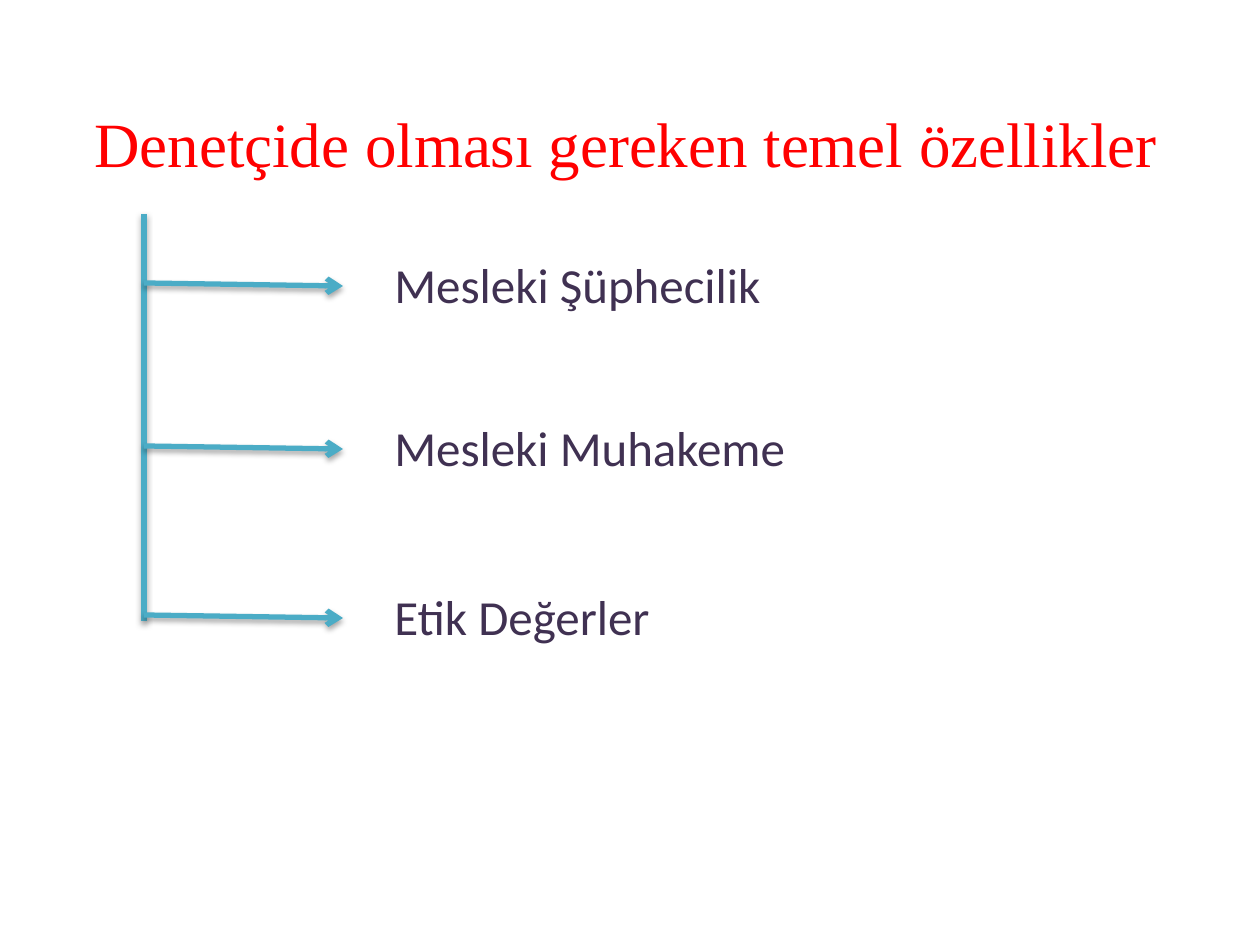
from lxml.etree import SubElement
from pptx import Presentation
from pptx.dml.color import RGBColor as RGB
from pptx.enum.shapes import MSO_CONNECTOR as Connector
from pptx.enum.text import MSO_AUTO_SIZE as AutoSize, PP_ALIGN as Align
from pptx.oxml.ns import qn
from pptx.util import Pt

EMU_PER_PX = 914400 / 126

THEME = {
    "title": {"name": "Times New Roman", "size": Pt(36), "color": RGB(0xFF, 0x00, 0x00)},
    "trait": {"name": "Calibri", "size": Pt(28), "color": RGB(0x40, 0x31, 0x52)},
    "line": {"color": RGB(0x4B, 0xAC, 0xC6), "width": Pt(3)},
    "shadow": {"blurRad": 40000, "dist": 23000, "dir": 5400000, "rotWithShape": 0},
    "shadow_alpha": 35000,
}

TITLE = "Denetçide olması gereken temel özellikler"
# Trait, top of its label, width of its label
TRAITS = [
    ("Mesleki Şüphecilik", 248, 433),
    ("Mesleki Muhakeme", 411, 452),
    ("Etik Değerler", 580, 312),
]
TRUNK_X, TRUNK_TOP, TRUNK_BOTTOM = 144, 214, 621
ARROW_END_X = 343
LABEL_X, LABEL_HEIGHT = 382, 72
ARROW_DROP, ARROW_SLOPE = 35, 3


def px(length):
    return round(length * EMU_PER_PX)


def add_text(slide, text, box, style, wrap):
    label = slide.shapes.add_textbox(*map(px, box))
    frame = label.text_frame
    for name, value in {"word_wrap": wrap, "auto_size": AutoSize.SHAPE_TO_FIT_TEXT}.items():
        setattr(frame, name, value)
    paragraph = frame.paragraphs[0]
    paragraph.alignment = Align.LEFT
    run = paragraph.add_run()
    run.text = text
    for name in ("name", "size"):
        setattr(run.font, name, style[name])
    run.font.color.rgb = style["color"]


def add_shadow(properties):
    effects = SubElement(properties, qn("a:effectLst"))
    shadow = SubElement(effects, qn("a:outerShdw"))
    for name, value in THEME["shadow"].items():
        shadow.set(name, str(value))
    black = SubElement(shadow, qn("a:srgbClr"), val="000000")
    SubElement(black, qn("a:alpha"), val=str(THEME["shadow_alpha"]))


def add_line(slide, start, end, arrow=False):
    connector = slide.shapes.add_connector(Connector.STRAIGHT, *map(px, start + end))
    connector.line.color.rgb = THEME["line"]["color"]
    connector.line.width = THEME["line"]["width"]
    properties = connector._element.spPr
    if arrow:
        SubElement(properties.find(qn("a:ln")), qn("a:tailEnd"), type="arrow")
    add_shadow(properties)


def main():
    deck = Presentation()
    deck.slide_width, deck.slide_height = px(1260), px(945)
    slide = deck.slides.add_slide(deck.slide_layouts[6])

    # Heading
    add_text(slide, TITLE, (82, 98, 1097, 89), THEME["title"], True)

    # Trunk of the tree
    add_line(slide, (TRUNK_X, TRUNK_TOP), (TRUNK_X, TRUNK_BOTTOM))

    # One branch for each trait
    for trait, top, width in TRAITS:
        arrow_y = top + ARROW_DROP
        add_line(slide, (TRUNK_X, arrow_y), (ARROW_END_X, arrow_y + ARROW_SLOPE), arrow=True)
        add_text(slide, trait, (LABEL_X, top, width, LABEL_HEIGHT), THEME["trait"], False)

    deck.save("out.pptx")


if __name__ == "__main__":
    main()
